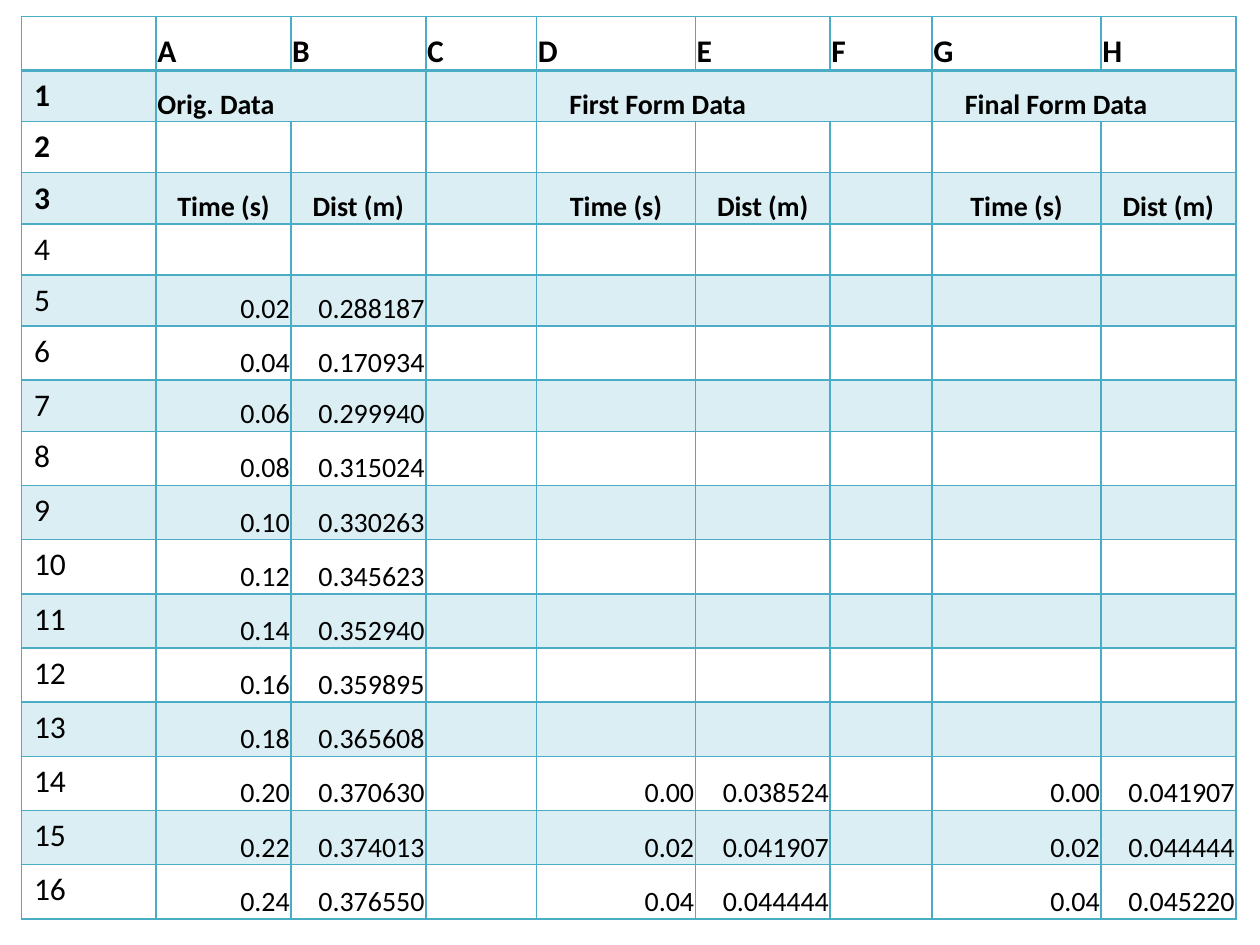
from dataclasses import dataclass

from lxml import etree
from pptx import Presentation
from pptx import util as u
from pptx.dml.color import RGBColor
from pptx.enum import text
from pptx.oxml import ns

COLORS = {"teal": "4BACC6", "ink": "000000"}
FONT = "Calibri"
COLUMN_WIDTHS = [1.07, 1.07, 1.07, 0.88, 1.26, 1.07, 0.81, 1.34, 1.07]
TALL_ROW, SHORT_ROW = 0.43, 0.4
SHORT_ROWS = {1, 2, 3, 4, 5, 7}
ROW_COUNT = 17
BOLD_ROWS = 3
FIRST_ORIGINAL_ROW, FIRST_SHIFTED_ROW = 5, 14
TIME_STEP = 0.02


@dataclass
class Series:
    title: str
    column: int
    span: int
    first_row: int
    start_time: float
    distances: list[str]
    title_indent: float = 0.01


SERIES = [
    Series("Orig. Data", 1, 2, FIRST_ORIGINAL_ROW, 0.02,
           ["0.288187", "0.170934", "0.299940", "0.315024", "0.330263", "0.345623",
            "0.352940", "0.359895", "0.365608", "0.370630", "0.374013", "0.376550"]),
    Series("First Form Data", 4, 3, FIRST_SHIFTED_ROW, 0,
           ["0.038524", "0.041907", "0.044444"], 0.26),
    Series("Final Form Data", 7, 2, FIRST_SHIFTED_ROW, 0,
           ["0.041907", "0.044444", "0.045220"], 0.26),
]


def write_text(cell, content: str, *, size: int = 16, bold: bool = False,
               align=text.PP_ALIGN.LEFT) -> None:
    paragraph = cell.text_frame.paragraphs[0]
    paragraph.alignment = align
    run = paragraph.add_run()
    run.text = content
    run.font.name = FONT
    run.font.size = u.Pt(size)
    run.font.bold = bold
    run.font.color.rgb = RGBColor.from_string(COLORS["ink"])


def write_sheet_cell(cell, content: str, *, indent: float = 0.01, **text_format) -> None:
    cell.vertical_anchor = text.MSO_ANCHOR.BOTTOM
    cell.margin_left = u.Inches(indent)
    cell.margin_right = cell.margin_top = u.Inches(0.01)
    cell.margin_bottom = u.Inches(0)
    write_text(cell, content, **text_format)


def draw_borders(cell, widths: dict[str, int]) -> None:
    properties = cell._tc.get_or_add_tcPr()
    for side, width in widths.items():
        line = etree.SubElement(properties, ns.qn(f"a:ln{side}"), w=str(u.Pt(width)))
        fill = etree.SubElement(line, ns.qn("a:solidFill"))
        etree.SubElement(fill, ns.qn("a:srgbClr"), val=COLORS["teal"])


def fill_band(cell) -> None:
    cell.fill.solid()
    cell.fill.fore_color.rgb = RGBColor.from_string(COLORS["teal"])
    color = cell._tc.tcPr.find(".//" + ns.qn("a:srgbClr"), None) \
        if cell._tc.tcPr.find(ns.qn("a:solidFill")) is None \
        else cell._tc.tcPr.find(ns.qn("a:solidFill"))[0]
    etree.SubElement(color, ns.qn("a:alpha"), val="20000")


def style_grid(table) -> None:
    table.first_row = table.horz_banding = False
    for column, width in zip(table.columns, COLUMN_WIDTHS):
        column.width = u.Inches(width)
    for index, row in enumerate(table.rows):
        row.height = u.Inches(SHORT_ROW if index in SHORT_ROWS else TALL_ROW)
        widths = {"L": 1, "R": 1, "T": 2 if index == 1 else 1, "B": 2 if index == 0 else 1}
        for cell in row.cells:
            draw_borders(cell, widths)
            if index % 2:
                fill_band(cell)
            else:
                cell.fill.background()


def write_headings(table) -> None:
    for column, letter in enumerate("ABCDEFGH", start=1):
        write_sheet_cell(table.cell(0, column), letter, size=18, bold=True)
    for row in range(1, ROW_COUNT):
        write_text(table.cell(row, 0), str(row), size=18, bold=row <= BOLD_ROWS)


def write_series(table, series: Series) -> None:
    title = table.cell(1, series.column)
    title.merge(table.cell(1, series.column + series.span - 1))
    write_sheet_cell(title, series.title, indent=series.title_indent, bold=True)
    for offset, label in enumerate(["Time (s)", "Dist (m)"]):
        write_sheet_cell(table.cell(3, series.column + offset), label,
                         bold=True, align=text.PP_ALIGN.CENTER)
    for step, distance in enumerate(series.distances):
        time = f"{series.start_time + step * TIME_STEP:.2f}"
        for offset, value in enumerate([time, distance]):
            write_sheet_cell(table.cell(series.first_row + step, series.column + offset),
                             value, align=text.PP_ALIGN.RIGHT)


def main() -> None:
    presentation = Presentation()
    presentation.slide_width, presentation.slide_height = u.Inches(10), u.Inches(7.5)
    slide = presentation.slides.add_slide(presentation.slide_layouts[6])
    table = slide.shapes.add_table(
        ROW_COUNT, len(COLUMN_WIDTHS),
        u.Inches(0.17), u.Inches(0.13), u.Inches(9.64), u.Inches(7.12)).table
    style_grid(table)
    write_headings(table)
    for series in SERIES:
        write_series(table, series)
    presentation.save("out.pptx")


if __name__ == "__main__":
    main()
